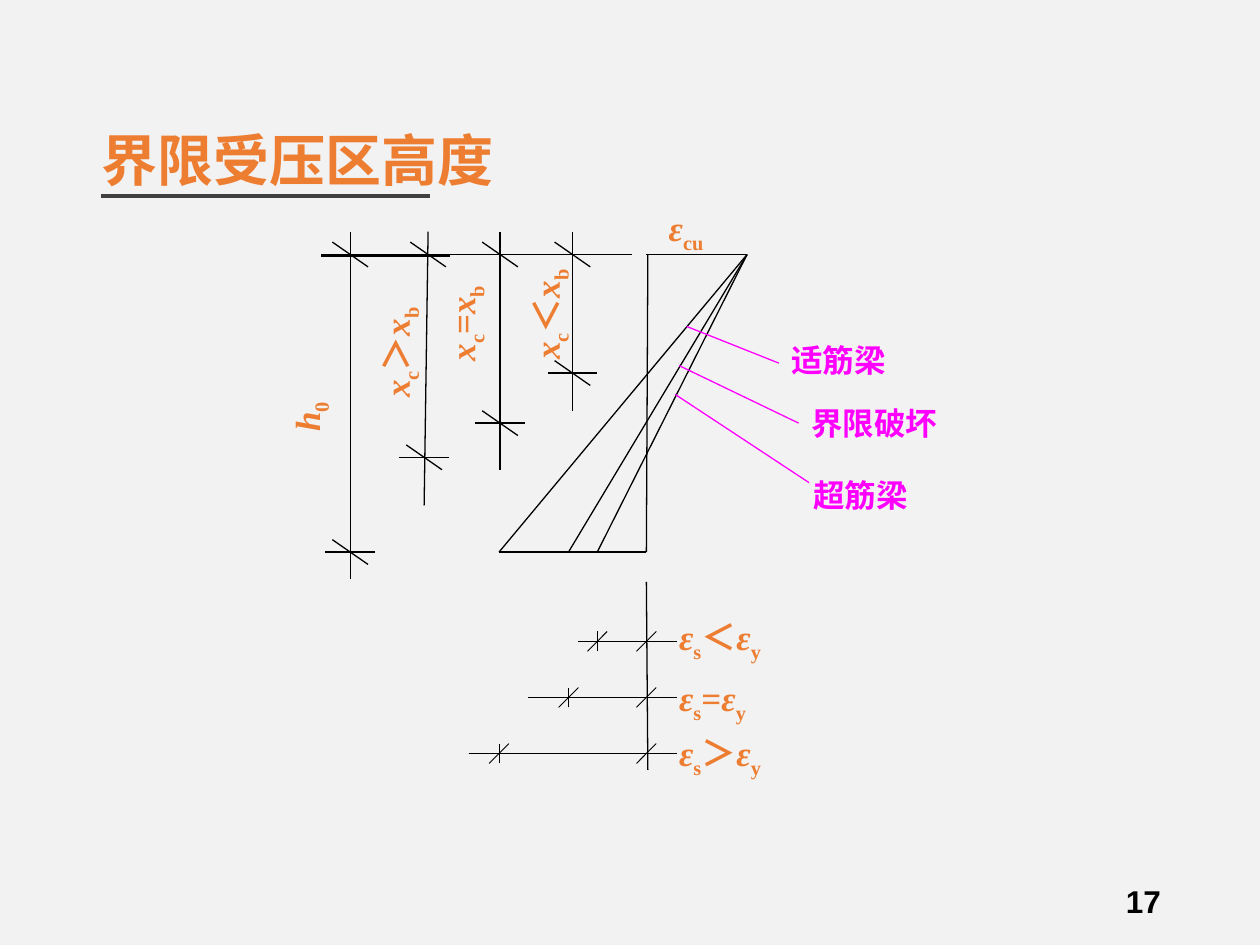
from lxml import etree
from pptx import Presentation
from pptx.dml.color import RGBColor
from pptx.enum.shapes import MSO_CONNECTOR
from pptx.enum.text import MSO_ANCHOR, PP_ALIGN
from pptx.oxml.ns import qn
from pptx.util import Cm, Pt

STRAIGHT = MSO_CONNECTOR.STRAIGHT
TOP = MSO_ANCHOR.TOP
LEFT, RIGHT = PP_ALIGN.LEFT, PP_ALIGN.RIGHT

BACKGROUND = RGBColor(0xF2, 0xF2, 0xF2)
BLACK = RGBColor(0x00, 0x00, 0x00)
GRAY = RGBColor(0x40, 0x40, 0x40)
ORANGE = RGBColor(0xED, 0x7D, 0x31)
MAGENTA = RGBColor(0xFF, 0x00, 0xFF)

SERIF = "Times New Roman"
SANS = "Arial"
LABEL_HEIGHT = 1.09


def add_line(slide, start, end, color=BLACK, width=0.75):
    connector = slide.shapes.add_connector(
        STRAIGHT, Cm(start[0]), Cm(start[1]), Cm(end[0]), Cm(end[1]))
    connector.line.color.rgb = color
    connector.line.width = Pt(width)
    etree.SubElement(connector._element.spPr, qn("a:effectLst"))


def add_text(slide, text, left, top, width, height, *, size=20, font=SERIF,
             color=ORANGE, align=LEFT, wrap=False, rotation=0):
    """Text is a string or a list of (text, italic, subscript) parts."""
    box = slide.shapes.add_textbox(Cm(left), Cm(top), Cm(width), Cm(height))
    box.rotation = rotation
    frame = box.text_frame
    frame.word_wrap = wrap
    frame.vertical_anchor = TOP
    paragraph = frame.paragraphs[0]
    paragraph.alignment = align
    parts = [(text, False, False)] if isinstance(text, str) else text
    for content, italic, subscript in parts:
        run = paragraph.add_run()
        run.text = content
        run.font.name = font
        run.font.size = Pt(size)
        run.font.bold = True
        run.font.italic = italic
        run.font.color.rgb = color
        if subscript:
            run._r.get_or_add_rPr().set("baseline", "-25000")


def symbol(letter, index):
    return [(letter, True, False), (index, False, True)]


def relation(letter, first, sign, second):
    return symbol(letter, first) + [(sign, False, False)] + symbol(letter, second)


def add_header(slide, left, top):
    add_line(slide, (left + 0.23, top + 1.55), (left + 6.86, top + 1.55), GRAY, 2.25)
    add_text(slide, "界限受压区高度", left, top, 8.46, 1.6, size=32, font=SANS)


def add_strain_diagram(slide, left, top):
    axis, apex, bottom = left + 2.97, left + 5, top + 6
    add_line(slide, (axis + 0.03, top), (axis, bottom))
    add_line(slide, (axis, top), (apex, top))
    for foot in (0, 1.4, 1.98):
        add_line(slide, (left + foot, bottom), (axis, bottom))
        add_line(slide, (apex, top), (left + foot, bottom))
    add_text(slide, symbol("ε", "cu"), axis + 0.2, top - LABEL_HEIGHT, 1.68, LABEL_HEIGHT)


def add_steel_strains(slide, left, top):
    """Horizontal dimensions of the steel strain, measured from the axis."""
    axis, tick = left + 3.58, 0.2
    add_line(slide, (axis, top), (axis + 0.03, top + 3.79))
    rows = [("＜", 2.21, 2.59, 0.56), ("=", 1.19, 2.01, 1.78), ("＞", 0, 0.61, 2.9)]
    for number, (sign, start, foot, label_top) in enumerate(rows):
        y = top + 1.2 + 1.13 * number
        foot += left
        add_line(slide, (left + start, y), (axis + 0.61, y), width=0.5)
        add_line(slide, (foot, y + tick), (foot, y - tick), width=0.5)
        for x in (foot, axis):
            add_line(slide, (x - tick, y + tick), (x + tick, y - tick), width=0.5)
        add_text(slide, relation("ε", "s", sign, "y"),
                 axis + 0.41, top + label_top, 3.05, LABEL_HEIGHT)


def add_depth_dimension(slide, top_x, bottom_x, top, tick, end):
    """One vertical dimension, crossed at the top face and at the tick depth."""
    add_line(slide, (top_x, top), (bottom_x, top + end))
    add_line(slide, (bottom_x - 0.5, top + tick), (bottom_x + 0.5, top + tick))
    for x, y in ((top_x, top + 0.46), (bottom_x, top + tick)):
        add_line(slide, (x - 0.36, y - 0.25), (x + 0.36, y + 0.25))


def add_depths(slide, left, top):
    face = top + 0.46
    for start, end, y in ((0, 1.19, face), (0, 2.59, face + 0.03), (0.05, 6.27, face)):
        add_line(slide, (left + start, y), (left + end, y))
    # top x, bottom x, tick depth, end depth, label, label centre, label length
    depths = [
        (0.58, 0.58, 6.46, 7.01, symbol("h", "0"), (-0.31, 3.72), 1.12),
        (2.15, 2.07, 4.55, 5.52, relation("x", "c", "＞", "b"), (1.5, 2.4), 2.39),
        (3.6, 3.6, 3.86, 4.8, relation("x", "c", "=", "b"), (2.82, 1.82), 2.08),
        (5.06, 5.06, 2.85, 3.61, relation("x", "c", "＜", "b"), (4.52, 1.64), 2.39),
    ]
    for top_x, bottom_x, tick, end, label, (x, y), length in depths:
        add_depth_dimension(slide, left + top_x, left + bottom_x, top, tick, end)
        add_text(slide, label, left + x - length / 2, top + y - LABEL_HEIGHT / 2,
                 length, LABEL_HEIGHT, wrap=len(label) > 2, rotation=270)


def add_beam_callouts(slide, left, top):
    # text, line start, line end, text corner, text width
    callouts = [
        ("适筋梁", (0.23, 0), (2.09, 0.74), (2.09, 0.18), 2.41),
        ("界限破坏", (0.08, 0.79), (2.49, 1.95), (2.49, 1.45), 3.07),
        ("超筋梁", (0, 1.37), (2.7, 3.15), (2.54, 2.89), 2.41),
    ]
    for text, start, end, corner, width in callouts:
        add_line(slide, (left + start[0], top + start[1]),
                 (left + end[0], top + end[1]), MAGENTA)
        add_text(slide, text, left + corner[0], top + corner[1], width, 1.02,
                 size=18, color=MAGENTA)


def main():
    presentation = Presentation()
    presentation.slide_width, presentation.slide_height = Cm(25.4), Cm(19.05)
    slide = presentation.slides.add_slide(presentation.slide_layouts[6])
    slide.background.fill.solid()
    slide.background.fill.fore_color.rgb = BACKGROUND

    add_header(slide, 1.8, 2.41)
    add_strain_diagram(slide, 10.06, 5.13)
    add_steel_strains(slide, 9.45, 11.73)
    add_depths(slide, 6.48, 4.67)
    add_beam_callouts(slide, 13.61, 6.58)
    add_text(slide, "17", 17.93, 17.65, 5.72, 1.02, size=18, font=SANS,
             color=BLACK, align=RIGHT, wrap=True)
    presentation.save("out.pptx")


if __name__ == "__main__":
    main()
